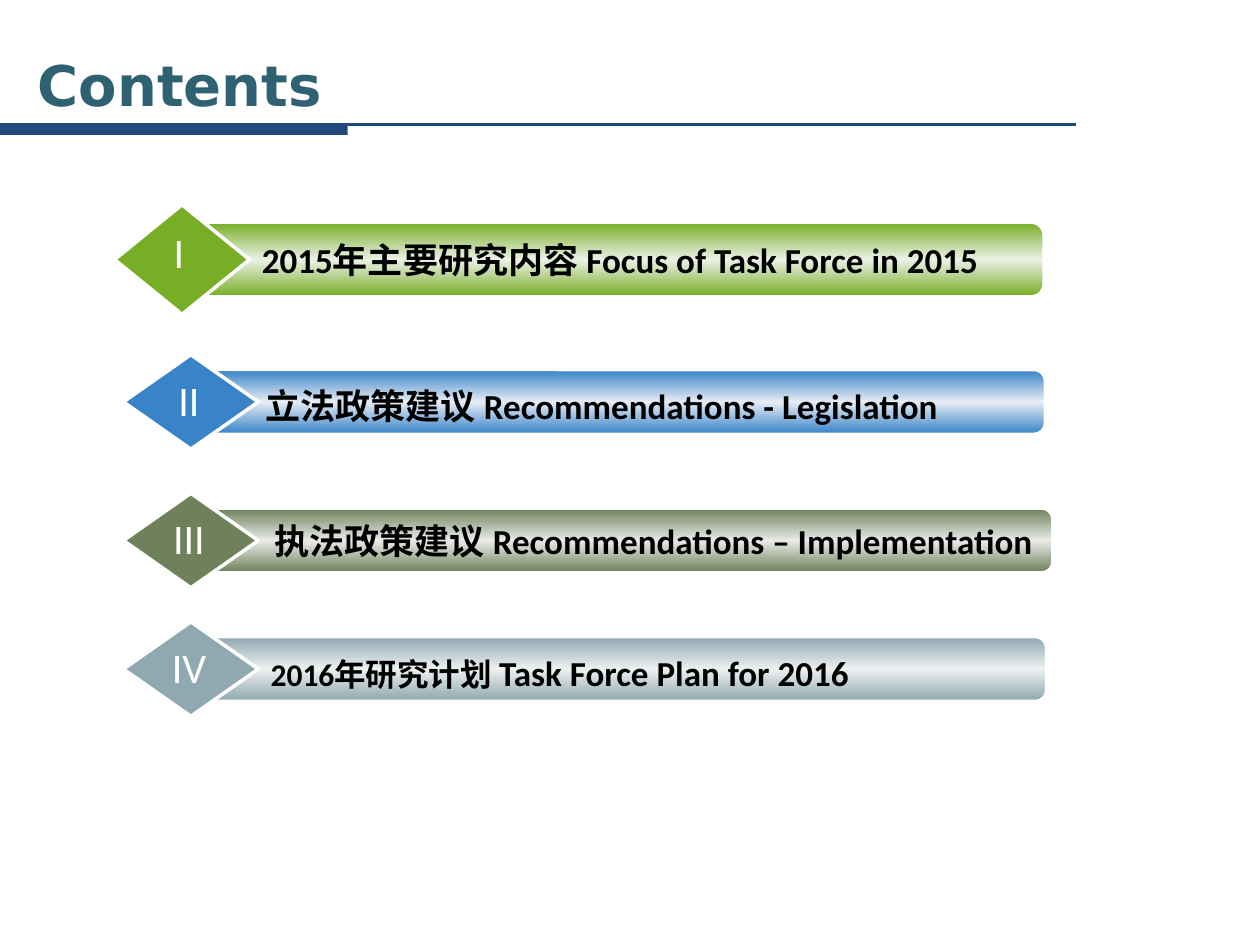
import copy
from dataclasses import dataclass

import pptx
import pptx.dml.color
import pptx.enum.shapes
import pptx.enum.text
import pptx.oxml.ns
import pptx.util
from lxml import etree

RGBColor = pptx.dml.color.RGBColor
Shape = pptx.enum.shapes.MSO_SHAPE
Align = pptx.enum.text.PP_ALIGN
Anchor = pptx.enum.text.MSO_ANCHOR
AutoSize = pptx.enum.text.MSO_AUTO_SIZE

NAVY = RGBColor(0x1F, 0x49, 0x7D)
TEAL = RGBColor(0x2E, 0x62, 0x72)
GREEN = RGBColor(0x77, 0xAE, 0x26)
PALE_GREEN = RGBColor(0xEB, 0xF1, 0xE6)
BLUE = RGBColor(0x39, 0x84, 0xC9)
PALE_BLUE = RGBColor(0xE7, 0xEC, 0xF5)
OLIVE = RGBColor(0x6E, 0x81, 0x5B)
PALE_OLIVE = RGBColor(0xEA, 0xEB, 0xE8)
GREY = RGBColor(0x90, 0xA8, 0xB0)
PALE_GREY = RGBColor(0xED, 0xF0, 0xF1)
WHITE = RGBColor(0xFF, 0xFF, 0xFF)
BLACK = RGBColor(0x00, 0x00, 0x00)

# The slide is a grid of 100 columns by 75 rows
COLUMNS, ROWS = 100, 75
SLIDE_WIDTH, SLIDE_HEIGHT = pptx.util.Inches(10), pptx.util.Inches(7.5)
BAR_INDENT = 5.9  # columns from the diamond's left corner to the bar
DIAMOND_SCALE = 1.5  # diamond height against bar height
DIAMOND_WIDTH = 10.7


@dataclass(frozen=True)
class Area:
    left: float
    top: float
    width: float
    height: float

    def emu(self) -> tuple[int, int, int, int]:
        return (
            round(self.left * SLIDE_WIDTH / COLUMNS),
            round(self.top * SLIDE_HEIGHT / ROWS),
            round(self.width * SLIDE_WIDTH / COLUMNS),
            round(self.height * SLIDE_HEIGHT / ROWS),
        )


@dataclass(frozen=True)
class Entry:
    numeral: str
    spans: tuple[tuple[str, int], ...]  # text and size
    color: RGBColor
    pale: RGBColor
    left: float
    bar: tuple[float, float, float]  # top, width, height
    label: Area
    numeral_center: float
    numeral_width: float


ENTRIES = (
    Entry("I", (("2015年主要研究内容 Focus of Task Force in 2015", 20),),
          GREEN, PALE_GREEN, 9.1, (17.7, 67.8, 5.8),
          Area(19.8, 18.4, 64.9, 4.4), 14.2, 3),
    Entry("II", (("立法政策建议 Recommendations - Legislation", 20),),
          BLUE, PALE_BLUE, 9.8, (29.4, 67.2, 5),
          Area(20.1, 30, 74, 4.4), 15, 3.9),
    Entry("III", (("执法政策建议 Recommendations – Implementation", 20),),
          OLIVE, PALE_OLIVE, 9.8, (40.4, 67.8, 5),
          Area(20.8, 40.7, 67.8, 4.4), 15, 4.8),
    Entry("IV", (("2016年研究计划 ", 18), ("Task Force Plan for 2016", 20)),
          GREY, PALE_GREY, 9.8, (50.6, 67.3, 5),
          Area(20.5, 51.2, 52, 4.4), 15, 5.9),
)


def add_block(page, kind, area: Area, line_width: float = 0):
    block = page.shapes.add_shape(kind, *area.emu())
    block.shadow.inherit = False
    if line_width:
        block.line.color.rgb = WHITE
        block.line.width = pptx.util.Pt(line_width)
    else:
        block.line.fill.background()
    return block


def fill_gradient(block, edge: RGBColor, middle: RGBColor) -> None:
    block.fill.gradient()
    block.fill.gradient_angle = 90
    stop_list = block.fill._xPr.find(".//" + pptx.oxml.ns.qn("a:gsLst"))
    stop_list.append(copy.deepcopy(stop_list[0]))
    stops = zip(block.fill.gradient_stops, (0, 0.5, 1), (edge, middle, edge))
    for stop, position, color in stops:
        stop.position = position
        stop.color.rgb = color


def add_text(page, area: Area, spans, color: RGBColor, bold=False, wrap=True):
    box = page.shapes.add_textbox(*area.emu())
    box.text_frame.word_wrap = wrap
    para = box.text_frame.paragraphs[0]
    for text, size in spans:
        span = para.add_run()
        span.text = text
        span.font.size = pptx.util.Pt(size)
    para.font.name = "Calibri"
    para.font.bold = bold
    para.font.color.rgb = color
    for span in para.runs:
        span.font.name = "Calibri"
        span.font.bold = bold
        span.font.color.rgb = color
    return para


def add_header(page) -> None:
    # Thin rule with a thick start
    left, top, width, _ = Area(0, 9.9, 85.4, 0).emu()
    rule = page.shapes.add_connector(
        pptx.enum.shapes.MSO_CONNECTOR.STRAIGHT, left, top, left + width, top)
    rule.line.color.rgb = NAVY
    rule.line.width = pptx.util.Pt(1.5)
    etree.SubElement(rule._element.spPr, pptx.oxml.ns.qn("a:effectLst"))
    accent = add_block(page, Shape.RECTANGLE, Area(0, 9.9, 27.6, 0.8))
    accent.fill.solid()
    accent.fill.fore_color.rgb = NAVY

    # Title
    title = page.shapes.title
    title.left, title.top, title.width, title.height = Area(2, 3.6, 84.2, 6.2).emu()
    frame = title.text_frame
    frame.text = "Contents"
    frame.auto_size = AutoSize.NONE
    frame.vertical_anchor = Anchor.MIDDLE
    para = frame.paragraphs[0]
    para.alignment = Align.LEFT
    para.font.name = "DejaVu Sans"
    para.font.size = pptx.util.Pt(32)
    para.font.bold = True
    para.font.color.rgb = TEAL


def add_entry(page, entry: Entry) -> None:
    # Bar
    top, width, height = entry.bar
    bar_area = Area(entry.left + BAR_INDENT, top, width, height)
    bar = add_block(page, Shape.ROUNDED_RECTANGLE, bar_area, 1)
    fill_gradient(bar, entry.color, entry.pale)

    # Diamond, centred on the bar's height
    diamond_height = height * DIAMOND_SCALE
    diamond_top = top - (diamond_height - height) / 2
    diamond_area = Area(entry.left, diamond_top, DIAMOND_WIDTH, diamond_height)
    diamond = add_block(page, Shape.DIAMOND, diamond_area, 2)
    diamond.fill.solid()
    diamond.fill.fore_color.rgb = entry.color

    # Label and numeral
    add_text(page, entry.label, entry.spans, BLACK, bold=True)
    numeral_area = Area(entry.numeral_center - entry.numeral_width / 2,
                        top - 0.2, entry.numeral_width, 5.1)
    para = add_text(page, numeral_area, ((entry.numeral, 24),), WHITE, wrap=False)
    para.alignment = Align.CENTER


def main() -> None:
    deck = pptx.Presentation()
    deck.slide_width, deck.slide_height = SLIDE_WIDTH, SLIDE_HEIGHT
    page = deck.slides.add_slide(deck.slide_layouts.get_by_name("Title Only"))
    add_header(page)
    for entry in ENTRIES:
        add_entry(page, entry)
    deck.save("out.pptx")


if __name__ == "__main__":
    main()
